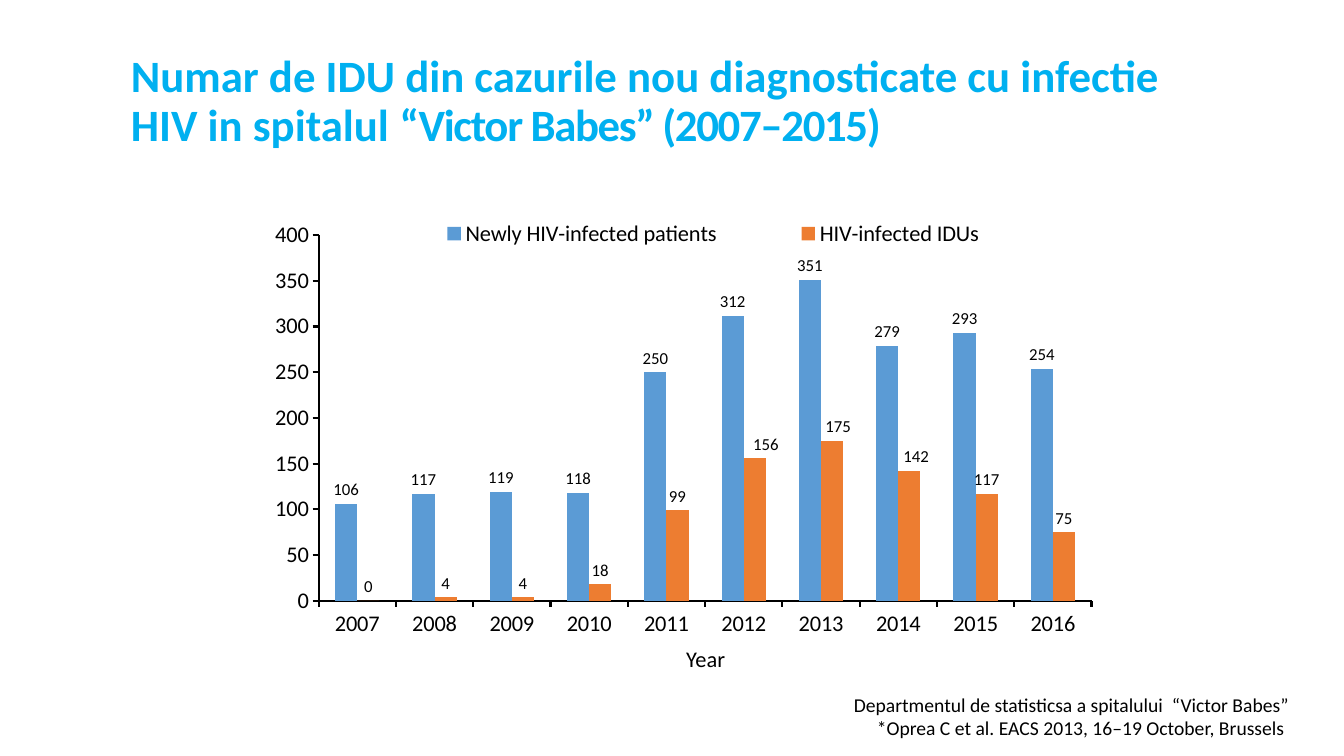
import pptx
import pptx.chart.data
import pptx.dml.color
import pptx.enum.chart
import pptx.enum.text
import pptx.oxml
import pptx.oxml.ns
import pptx.util

Cm, Pt = pptx.util.Cm, pptx.util.Pt
ALIGN, ANCHOR = pptx.enum.text.PP_ALIGN, pptx.enum.text.MSO_ANCHOR
XL = pptx.enum.chart

# Content
TITLE = ["Numar de IDU din cazurile nou diagnosticate cu infectie HIV in spitalul ",
         "“Victor Babes” (2007–2015)"]
AXIS_TITLE = ["Year"]
SOURCE = ["Departmentul de statisticsa a spitalului  “Victor Babes”\v"
          "*Oprea C et al. EACS 2013, 16–19 October, Brussels "]
YEARS = [str(year) for year in range(2007, 2017)]
SERIES = [
    ("Newly HIV-infected patients", "patients",
     (106, 117, 119, 118, 250, 312, 351, 279, 293, 254)),
    ("HIV-infected IDUs", "idus", (0, 4, 4, 18, 99, 156, 175, 142, 117, 75)),
]
LABEL_SHIFTS = {"2012": 0.013, "2013": 0.007, "2014": 0.008}
COLORS = {"title": "00B0F0", "text": "000000", "grid": "FFFFFF",
          "patients": "5B9BD5", "idus": "ED7D31"}
FONT = "Calibri"

# Left, top, width, height in cm
YEAR_BOX = (8.03, 16.13, 19.51, 0.94)
CHART_BOX = (6.3, 5.28, 21.62, 11.51)
TITLE_BOX = (3.3, 1.02, 27.48, 3.12)
SOURCE_BOX = (10.97, 17.32, 21.77, 1.45)
# Left, top, width, height as shares of the chart
PLOT_AREA = (0.08, 0.056, 0.901, 0.801)
LEGEND_AREA = (0.14, 0.018, 0.8, 0.07)


def rgb(name):
    return pptx.dml.color.RGBColor.from_string(COLORS[name])


def style(font, size, color="text", bold=False):
    font.name, font.size, font.bold = FONT, Pt(size), bold
    font.color.rgb = rgb(color)


def add_text(slide, box, parts, size, align, anchor, color="text", bold=False):
    tf = slide.shapes.add_textbox(*map(Cm, box)).text_frame
    tf.word_wrap, tf.vertical_anchor = True, anchor
    p = tf.paragraphs[0]
    p.text = parts[0]
    for part in parts[1:]:
        p.add_run().text = part
    p.alignment = align
    for r in p.runs:
        style(r.font, size, color, bold)
    return tf


def manual_layout(**settings):
    items = "".join(f'<c:{key} val="{value}"/>' for key, value in settings.items())
    return pptx.oxml.parse_xml(
        f'<c:layout {pptx.oxml.ns.nsdecls("c")}><c:manualLayout>{items}'
        "</c:manualLayout></c:layout>")


def area_layout(area, **target):
    return manual_layout(**target, xMode="edge", yMode="edge", **dict(zip("xywh", area)))


def set_layout(parent, layout, after=None):
    for old in parent.findall(pptx.oxml.ns.qn("c:layout")):
        parent.remove(old)
    position = 0 if after is None else parent.index(parent.find(pptx.oxml.ns.qn(after))) + 1
    parent.insert(position, layout)


def add_cases_chart(slide):
    data = pptx.chart.data.CategoryChartData()
    data.categories = YEARS
    for name, _, values in SERIES:
        data.add_series(name, values)
    chart = slide.shapes.add_chart(
        XL.XL_CHART_TYPE.COLUMN_CLUSTERED, *map(Cm, CHART_BOX), data).chart
    chart.has_title = False
    style(chart.font, 16)

    # Axes
    for axis in (chart.category_axis, chart.value_axis):
        axis.major_tick_mark = XL.XL_TICK_MARK.OUTSIDE
        axis.format.line.color.rgb = rgb("text")
        axis.format.line.width = Pt(1.5)
    values = chart.value_axis
    values.minimum_scale, values.maximum_scale, values.major_unit = 0, 400, 50
    values.major_gridlines.format.line.color.rgb = rgb("grid")
    values.major_gridlines.format.line.width = Pt(0.75)

    # Columns and their labels
    plot = chart.plots[0]
    plot.gap_width, plot.overlap, plot.vary_by_categories = 150, 0, False
    for series, (_, color, _) in zip(plot.series, SERIES):
        series.format.fill.solid()
        series.format.fill.fore_color.rgb = rgb(color)
        labels = series.data_labels
        labels.show_value = True
        labels.position = XL.XL_LABEL_POSITION.OUTSIDE_END
        style(labels.font, 12)
    idus = plot.series[1]
    for year, shift in LABEL_SHIFTS.items():
        label = idus.points[YEARS.index(year)].data_label
        label.position = XL.XL_LABEL_POSITION.OUTSIDE_END
        style(label.font, 12)

    # Legend and manual placement
    chart.has_legend = True
    legend = chart.legend
    legend.position = XL.XL_LEGEND_POSITION.BOTTOM
    legend.include_in_layout = True
    style(legend.font, 16)
    root = chart.element if hasattr(chart, "element") else chart._chartSpace
    plot_area = next(root.iter(pptx.oxml.ns.qn("c:plotArea")))
    set_layout(plot_area, area_layout(PLOT_AREA, layoutTarget="inner"))
    set_layout(next(root.iter(pptx.oxml.ns.qn("c:legend"))),
               area_layout(LEGEND_AREA), after="c:legendPos")
    shifted = root.iter(pptx.oxml.ns.qn("c:dLbl"))
    for label, shift in zip(list(shifted), LABEL_SHIFTS.values()):
        set_layout(label, manual_layout(x=shift, y=0), after="c:idx")


def main():
    prs = pptx.Presentation()
    prs.slide_width, prs.slide_height = Cm(33.87), Cm(19.05)
    slide = prs.slides.add_slide(prs.slide_layouts[6])

    add_text(slide, YEAR_BOX, AXIS_TITLE, 16, ALIGN.CENTER, ANCHOR.TOP)
    add_cases_chart(slide)

    # Title, with its second part set tighter
    tf = add_text(slide, TITLE_BOX, TITLE, 32, ALIGN.LEFT, ANCHOR.MIDDLE, "title", True)
    tf.margin_left = tf.margin_right = 0
    p = tf.paragraphs[0]
    p.line_spacing = 0.9
    p.runs[1].font._element.set("spc", "-100")

    add_text(slide, SOURCE_BOX, SOURCE, 14, ALIGN.RIGHT, ANCHOR.BOTTOM)
    prs.save("out.pptx")


if __name__ == "__main__":
    main()
